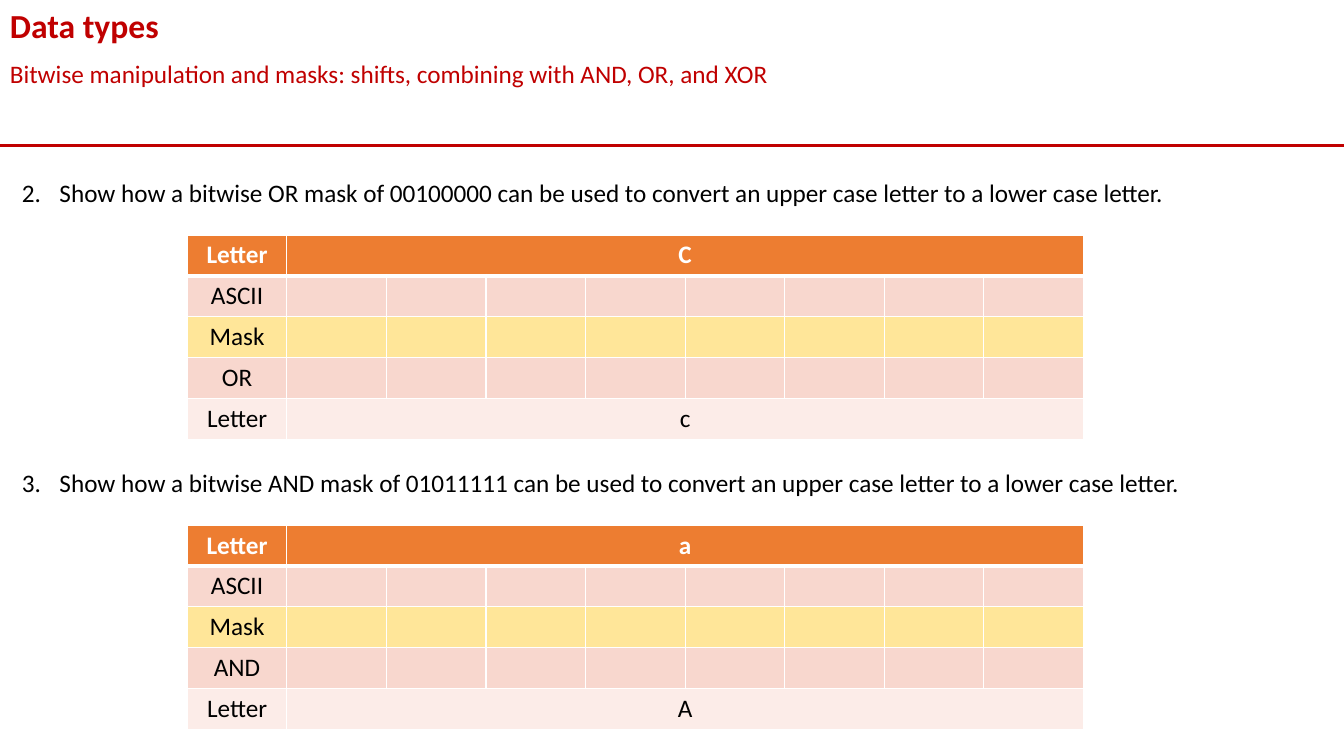
"""Build a slide with two bitwise mask exercises."""
from lxml import etree
from pptx import Presentation
from pptx.dml.color import RGBColor
from pptx.enum.shapes import MSO_CONNECTOR
from pptx.enum.text import MSO_AUTO_SIZE, PP_ALIGN
from pptx.oxml.ns import qn
from pptx.util import Cm, Pt

LINE = MSO_CONNECTOR.STRAIGHT
GROW = MSO_AUTO_SIZE.SHAPE_TO_FIT_TEXT
CENTER = PP_ALIGN.CENTER
FONT = "Calibri"
WIDE = 33.87
BITS = 8
COLORS = {
    "red": "C00000", "black": "000000", "white": "FFFFFF",
    "head": "ED7D31", "pink": "F8D7CE", "mask": "FFE699", "pale": "FCECE8",
}
TASKS = [
    (2, "Show how a bitwise OR mask of 00100000 can be used to convert "
        "an upper case letter to a lower case letter.", "C", "OR", "c"),
    (3, "Show how a bitwise AND mask of 01011111 can be used to convert "
        "an upper case letter to a lower case letter.", "a", "AND", "A"),
]


def color(name):
    return RGBColor.from_string(COLORS[name])


def add_run(para, text, hue, size=18, bold=False):
    run = para.add_run()
    run.text = text
    font = run.font
    font.name, font.size, font.bold = FONT, Pt(size), bold
    font.color.rgb = color(hue)


def add_text(slide, spot, text, hue, size=18, bold=False, start=None):
    left, top, width, height = map(Cm, spot)
    frame = slide.shapes.add_textbox(left, top, width, height).text_frame
    frame.word_wrap = True
    frame.auto_size = GROW
    para = frame.paragraphs[0]
    if start:
        props = para._p.get_or_add_pPr()
        props.set("marL", str(Cm(0.95)))
        props.set("indent", str(-Cm(0.95)))
        etree.SubElement(props, qn("a:buFont"), typeface="+mj-lt")
        etree.SubElement(props, qn("a:buAutoNum"),
                         type="arabicPeriod", startAt=str(start))
    add_run(para, text, hue, size, bold)


def add_rule(slide, top):
    rule = slide.shapes.add_connector(LINE, 0, Cm(top), Cm(WIDE), Cm(top))
    rule.line.color.rgb = color("red")
    rule.line.width = Pt(2.25)
    etree.SubElement(rule._element.spPr, qn("a:effectLst"))


def add_edges(cell, row):
    props = cell._tc.get_or_add_tcPr()
    thick = {("lnB", 0), ("lnT", 1)}
    for side in ("lnL", "lnR", "lnT", "lnB"):
        width = Pt(3 if (side, row) in thick else 1)
        edge = etree.SubElement(props, qn("a:" + side), w=str(width))
        fill = etree.SubElement(edge, qn("a:solidFill"))
        etree.SubElement(fill, qn("a:srgbClr"), val=COLORS["white"])


def add_grid(slide, top, given, gate, result):
    rows = [
        ("Letter", given, "head"), ("ASCII", "", "pink"),
        ("Mask", "", "mask"), (gate, "", "pink"), ("Letter", result, "pale"),
    ]
    side, high = Cm(2.51), Cm(1.03)
    table = slide.shapes.add_table(
        len(rows), BITS + 1, Cm(4.72), Cm(top),
        side * (BITS + 1), high * len(rows)).table
    for col in table.columns:
        col.width = side
    for i, (label, value, fill) in enumerate(rows):
        table.rows[i].height = high
        cells = list(table.rows[i].cells)
        for cell in cells:
            add_edges(cell, i)
            cell.fill.solid()
            cell.fill.fore_color.rgb = color(fill)
        if value:
            cells[1].merge(cells[-1])
        for cell, text in zip(cells, (label, value)):
            if text:
                para = cell.text_frame.paragraphs[0]
                para.alignment = CENTER
                add_run(para, text, "black" if i else "white", bold=i == 0)


def main():
    deck = Presentation()
    deck.slide_width, deck.slide_height = Cm(WIDE), Cm(19.05)
    slide = deck.slides.add_slide(deck.slide_layouts[6])
    add_rule(slide, 3.66)
    add_text(slide, (0, 1.35, WIDE, 1.03),
             "Bitwise manipulation and masks: shifts, "
             "combining with AND, OR, and XOR", "red")
    add_text(slide, (0, 0, WIDE, 1.28), "Data types", "red", 24, True)
    for i, (start, text, given, gate, result) in enumerate(TASKS):
        top = 4.34 + 7.31 * i
        add_text(slide, (0.3, top, 32.08, 1.03), text, "black", start=start)
        add_grid(slide, top + 1.58, given, gate, result)
    deck.save("out.pptx")


if __name__ == "__main__":
    main()
